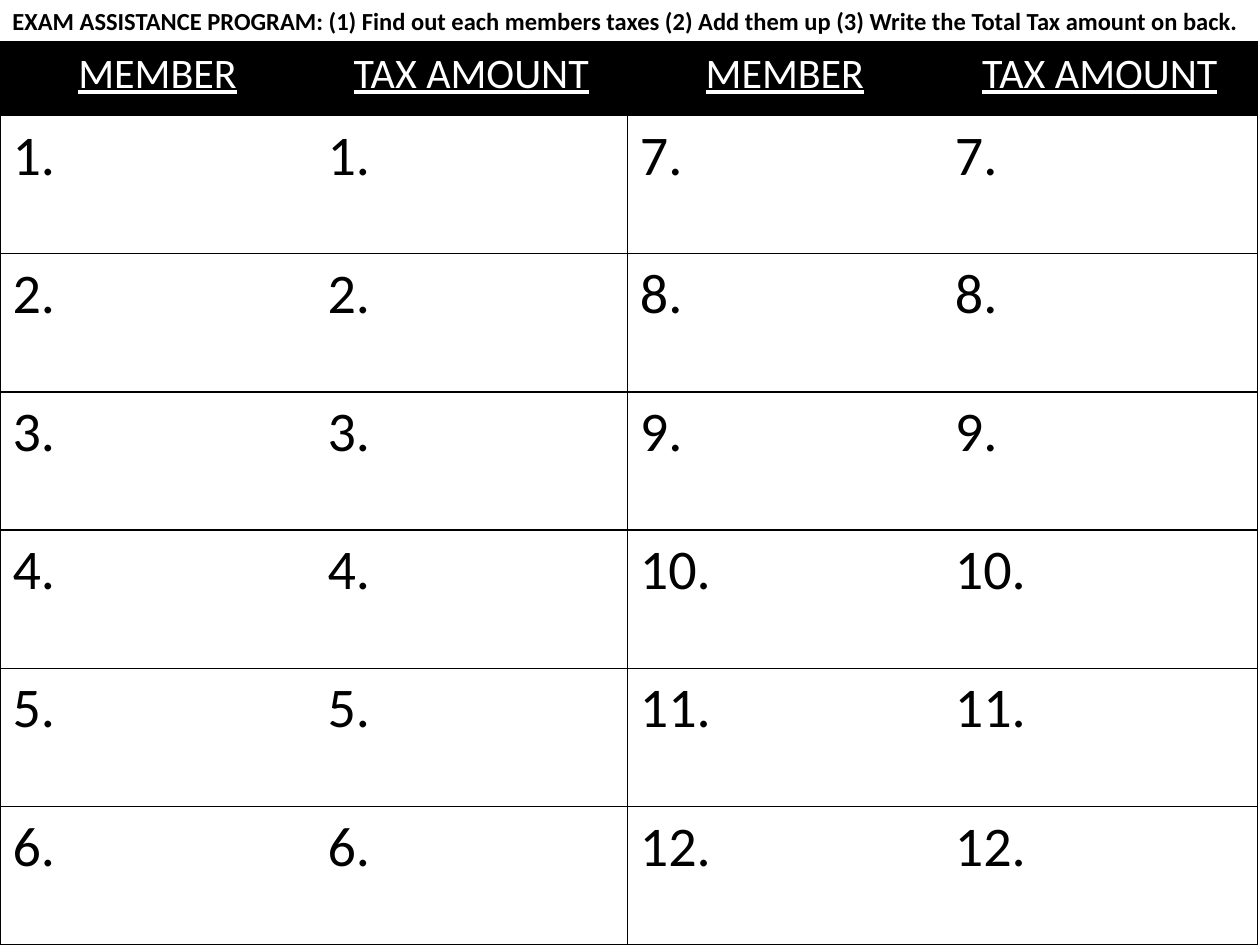
from dataclasses import dataclass

from lxml.etree import SubElement
from pptx import Presentation
from pptx.dml.color import RGBColor
from pptx.enum.text import MSO_AUTO_SIZE as AutoSize, PP_ALIGN as Align
from pptx.oxml.ns import qn
from pptx.table import _Cell as Cell
from pptx.text.text import _Paragraph as Paragraph
from pptx.util import Pt

BLACK = RGBColor(0, 0, 0)
WHITE = RGBColor(255, 255, 255)
FONT = "Calibri"

SLIDE_WIDTH, SLIDE_HEIGHT = 720, 540
INSTRUCTIONS_HEIGHT = 24
HEADER_HEIGHT, ENTRY_HEIGHT = 42, 79
COLUMN_WIDTHS = (180, 178.5, 180, 180)
HEADINGS = ("MEMBER", "TAX AMOUNT")
ENTRIES_PER_HALF = 6
INSTRUCTIONS = (
    "EXAM ASSISTANCE PROGRAM: (1) Find out each members taxes "
    "(2) Add them up (3) Write the Total Tax amount on back."
)


@dataclass(frozen=True)
class TextStyle:
    size: float
    color: RGBColor = BLACK
    bold: bool = False
    underline: bool = False
    align: Align = Align.LEFT


INSTRUCTIONS_STYLE = TextStyle(14, bold=True)
HEADING_STYLE = TextStyle(24, WHITE, underline=True, align=Align.CENTER)
ENTRY_STYLE = TextStyle(32)


def write(paragraph: Paragraph, wording: str, style: TextStyle) -> None:
    paragraph.text = wording
    paragraph.alignment = style.align
    font = paragraph.runs[0].font
    font.name = FONT
    font.size = Pt(style.size)
    font.bold = style.bold
    font.underline = style.underline
    font.color.rgb = style.color


def set_borders(cell: Cell, open_side: str) -> None:
    """Rule every side of the cell in black except the open one (L or R)."""
    properties = cell._tc.get_or_add_tcPr()
    for side in "LRTB":
        line = SubElement(properties, qn(f"a:ln{side}"), w=str(Pt(1)))
        if side == open_side:
            SubElement(line, qn("a:noFill"))
        else:
            fill = SubElement(line, qn("a:solidFill"))
            SubElement(fill, qn("a:srgbClr"), val=str(BLACK))


def add_instructions(slide) -> None:
    box = slide.shapes.add_textbox(0, 0, Pt(SLIDE_WIDTH), Pt(INSTRUCTIONS_HEIGHT))
    frame = box.text_frame
    frame.word_wrap = True
    frame.auto_size = AutoSize.SHAPE_TO_FIT_TEXT
    write(frame.paragraphs[0], INSTRUCTIONS, INSTRUCTIONS_STYLE)


def add_tax_table(slide) -> None:
    row_heights = [HEADER_HEIGHT] + [ENTRY_HEIGHT] * ENTRIES_PER_HALF
    table = slide.shapes.add_table(
        len(row_heights), len(COLUMN_WIDTHS), 0, Pt(INSTRUCTIONS_HEIGHT),
        Pt(sum(COLUMN_WIDTHS)), Pt(sum(row_heights)),
    ).table
    table.first_row = table.horz_banding = False
    for column, width in zip(table.columns, COLUMN_WIDTHS):
        column.width = Pt(width)

    for row_index, height in enumerate(row_heights):
        table.rows[row_index].height = Pt(height)
        for column_index in range(len(COLUMN_WIDTHS)):
            half, part = divmod(column_index, len(HEADINGS))
            cell = table.cell(row_index, column_index)
            set_borders(cell, open_side="L" if part else "R")
            paragraph = cell.text_frame.paragraphs[0]
            if row_index == 0:
                cell.fill.solid()
                cell.fill.fore_color.rgb = BLACK
                write(paragraph, HEADINGS[part], HEADING_STYLE)
            else:
                cell.fill.background()
                number = row_index + half * ENTRIES_PER_HALF
                write(paragraph, f"{number}.", ENTRY_STYLE)


def main() -> None:
    presentation = Presentation()
    presentation.slide_width = Pt(SLIDE_WIDTH)
    presentation.slide_height = Pt(SLIDE_HEIGHT)
    slide = presentation.slides.add_slide(presentation.slide_layouts[6])
    add_tax_table(slide)
    add_instructions(slide)
    presentation.save("out.pptx")


if __name__ == "__main__":
    main()
